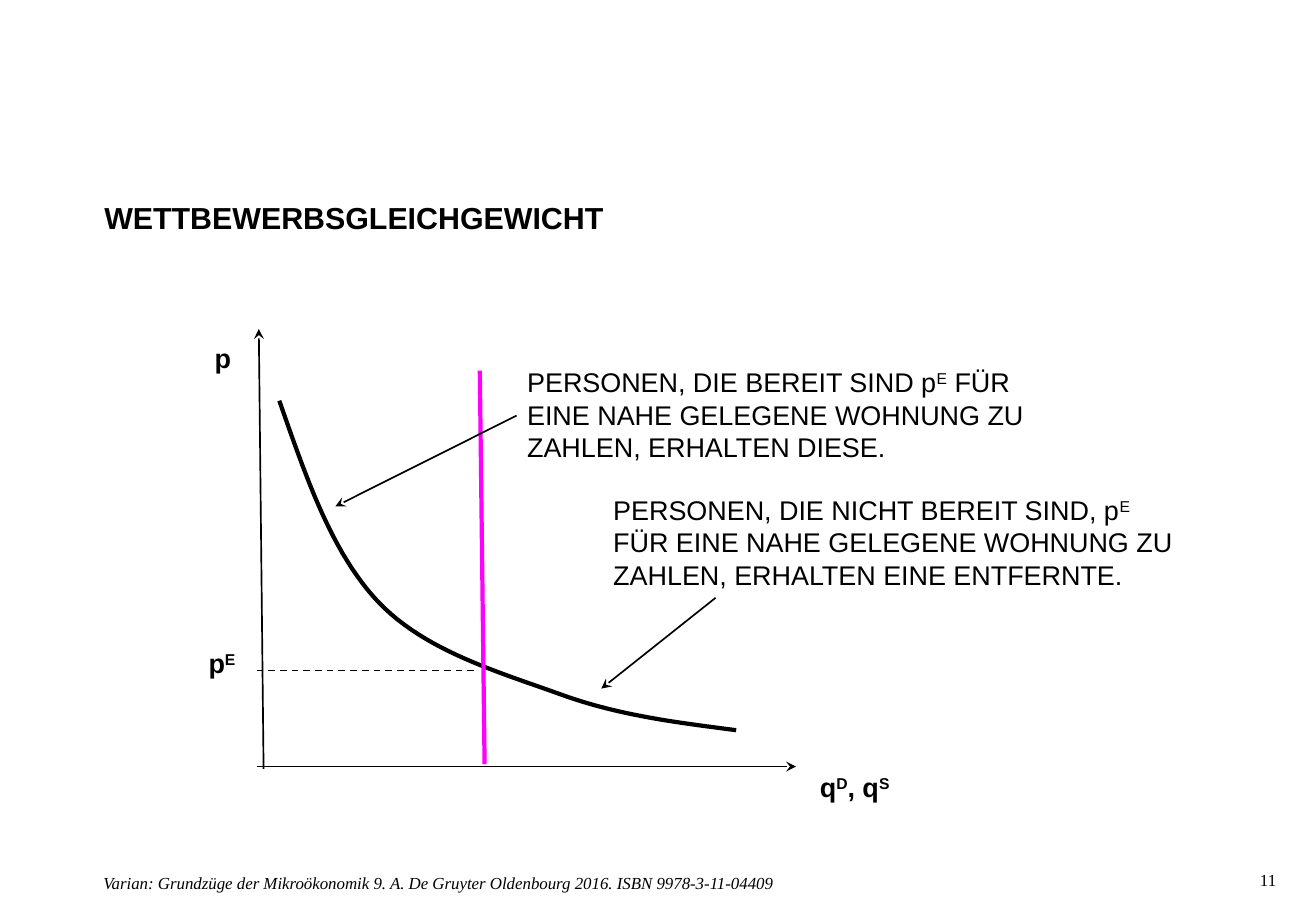
from lxml.etree import SubElement
from pptx import Presentation
from pptx.dml.color import RGBColor as Rgb
from pptx.enum.dml import MSO_LINE as Dash
from pptx.enum.shapes import MSO_CONNECTOR as Link
from pptx.enum.text import MSO_ANCHOR as Anchor, MSO_AUTO_SIZE as Fit, PP_ALIGN as Align
from pptx.oxml.ns import qn
from pptx.util import Cm, Pt

HUES = {"ink": "000000", "supply": "FF00FF"}
CURVE = [
    [(5.84, 8.38), (6.4, 9.98), (6.93, 11.56), (7.92, 12.6)],
    [(7.92, 12.6), (8.89, 13.61), (10.41, 14.05), (11.66, 14.5)],
    [(11.66, 14.5), (12.9, 14.96), (14.15, 15.11), (15.39, 15.27)],
]
STEPS = 24


def write(shape, text, size=16, font="Arial", bold=False, italic=False,
          wrap=True, inset=(0.25, 0.13, 0.25, 0.13), grow=True):
    """Fill a shape; a newline starts a paragraph, bars enclose a superscript."""
    frame = shape.text_frame
    frame.word_wrap = wrap
    frame.auto_size = Fit.SHAPE_TO_FIT_TEXT if grow else Fit.NONE
    frame.vertical_anchor = Anchor.TOP
    (frame.margin_left, frame.margin_top,
     frame.margin_right, frame.margin_bottom) = map(Cm, inset)
    for row, line in enumerate(text.split("\n")):
        para = frame.add_paragraph() if row else frame.paragraphs[0]
        para.alignment = Align.LEFT
        for index, part in enumerate(line.split("|")):
            if not part:
                continue
            run = para.add_run()
            run.text = part
            face = run.font
            face.size, face.name = Pt(size), font
            face.bold, face.italic = bold, italic
            face.color.rgb = Rgb.from_string(HUES["ink"])
            if index % 2:
                run._r.get_or_add_rPr().set("baseline", "30000")


def label(slide, box, text, **style):
    write(slide.shapes.add_textbox(*map(Cm, box)), text, **style)


def title(slide, box, text):
    shape = slide.shapes.title
    shape.left, shape.top, shape.width, shape.height = map(Cm, box)
    write(shape, text, size=18, bold=True, inset=(0, 0, 0.41, 0), grow=False)


def line(slide, start, end, hue="ink", width=1, tip=False, dash=False):
    link = slide.shapes.add_connector(Link.STRAIGHT, *map(Cm, start + end))
    link.line.color.rgb = Rgb.from_string(HUES[hue])
    link.line.width = Pt(width)
    if dash:
        link.line.dash_style = Dash.DASH
    if tip:
        SubElement(link.line._get_or_add_ln(), qn("a:tailEnd"), type="stealth")
    SubElement(link._element.spPr, qn("a:effectLst"))


def bezier(ends, t):
    u = 1 - t
    parts = (u ** 3, 3 * u * u * t, 3 * u * t * t, t ** 3)
    return tuple(Cm(sum(p * end[axis] for p, end in zip(parts, ends)))
                 for axis in (0, 1))


def demand(slide):
    points = [bezier(ends, step / STEPS)
              for ends in CURVE for step in range(1, STEPS + 1)]
    pen = slide.shapes.build_freeform(*map(Cm, CURVE[0][0]))
    pen.add_line_segments(points, close=False)
    shape = pen.convert_to_shape()
    shape.shadow.inherit = False
    shape.fill.background()
    shape.line.color.rgb = Rgb.from_string(HUES["ink"])
    shape.line.width = Pt(2.5)


def main():
    deck = Presentation()
    deck.slide_width, deck.slide_height = Cm(27.51), Cm(19.05)
    slide = deck.slides.add_slide(deck.slide_layouts[5])

    title(slide, (2.18, 4.17, 24.16, 1.37), "WETTBEWERBSGLEICHGEWICHT")
    foot = {"size": 10, "font": "Times New Roman", "inset": (0, 0, 0, 0), "grow": False}
    label(slide, (26.34, 18.19, 0.99, 0.51), "11", **foot)
    label(slide, (2.16, 18.24, 23.88, 0.51),
          "Varian: Grundzüge der Mikroökonomik 9. A. De Gruyter Oldenbourg 2016. "
          "ISBN 9978-3-11-04409", italic=True, **foot)

    line(slide, (5.51, 16.08), (5.41, 6.88), tip=True)
    line(slide, (5.38, 16.03), (16.64, 16.03), tip=True)
    demand(slide)
    line(slide, (10.13, 15.98), (10.03, 7.75), hue="supply", width=2.5)
    line(slide, (9.91, 14.02), (5.38, 14.02), dash=True)

    for box, text in (
        ((4.24, 7.01, 0.86, 0.94), "p"),
        ((4.11, 13.39, 1.12, 0.94), "p|E|"),
        ((16.89, 15.98, 2.06, 0.94), "q|D|, q|S|"),
    ):
        label(slide, box, text, bold=True, wrap=False)

    label(slide, (10.77, 7.52, 11.68, 2.31),
          "PERSONEN, DIE BEREIT SIND p|E| FÜR EINE NAHE GELEGENE WOHNUNG ZU "
          "ZAHLEN, ERHALTEN DIESE.")
    label(slide, (12.57, 10.19, 13.77, 2.31),
          "PERSONEN, DIE NICHT BEREIT SIND, p|E|\n"
          "FÜR EINE NAHE GELEGENE WOHNUNG ZU ZAHLEN, ERHALTEN EINE ENTFERNTE.")
    line(slide, (10.8, 8.69), (7.01, 10.59), tip=True)
    line(slide, (14.96, 12.5), (12.57, 14.4), tip=True)

    deck.save("out.pptx")


if __name__ == "__main__":
    main()
